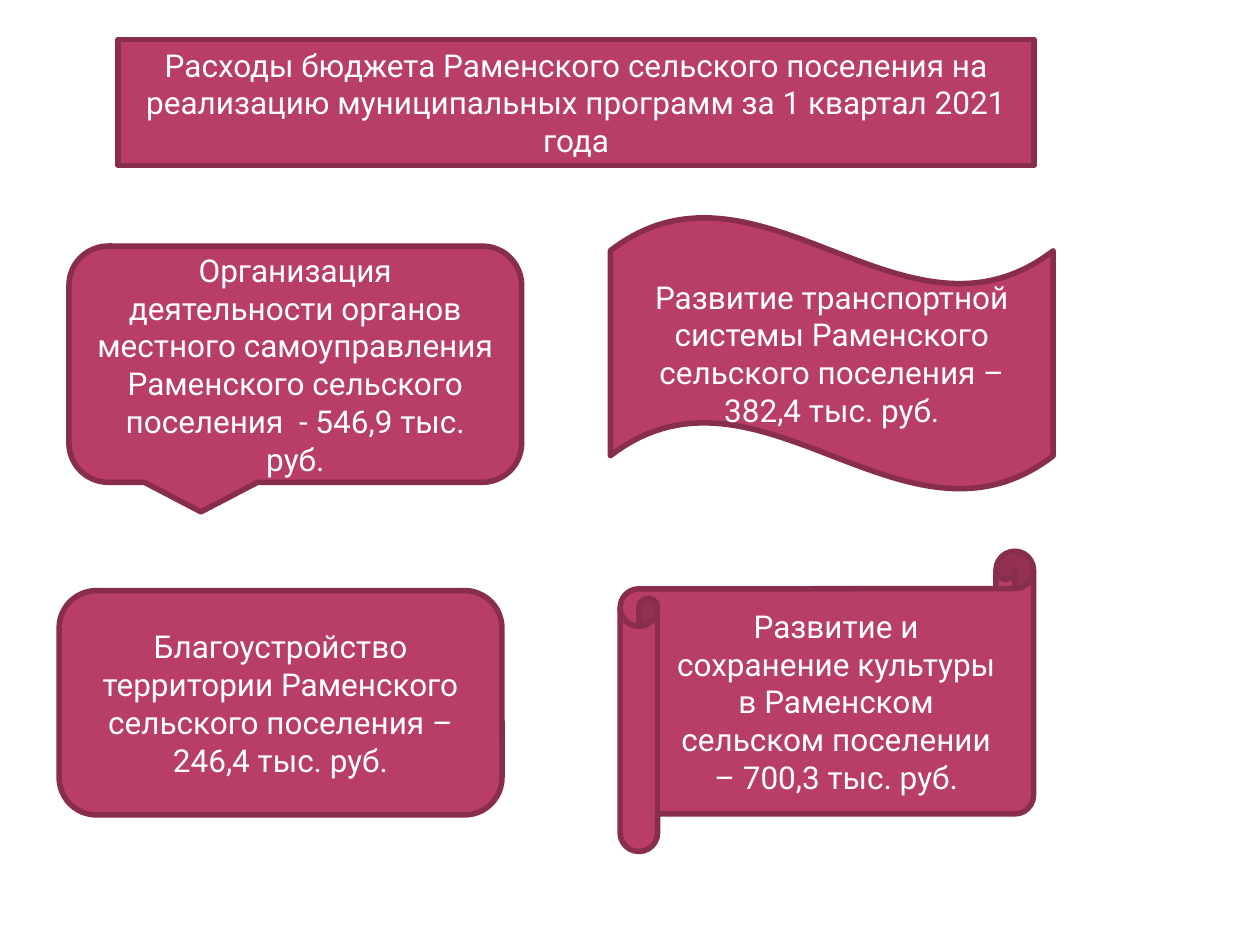
from pptx import Presentation
from pptx.dml.color import RGBColor
from pptx.enum import shapes, text
from pptx.util import Pt

COLORS = {"fill": "B83D68", "line": "882D4D", "text": "FFFFFF"}
SHAPE = shapes.MSO_SHAPE


def style(sp, wording):
    """Fill and outline a shape and centre its wording."""
    sp.fill.solid()
    sp.fill.fore_color.rgb = RGBColor.from_string(COLORS["fill"])
    sp.line.color.rgb = RGBColor.from_string(COLORS["line"])
    sp.line.width = Pt(3.15)
    tf = sp.text_frame
    tf.text = wording
    tf.word_wrap = True
    tf.auto_size = text.MSO_AUTO_SIZE.NONE
    tf.vertical_anchor = text.MSO_ANCHOR.MIDDLE
    p = tf.paragraphs[0]
    p.alignment = text.PP_ALIGN.CENTER
    p.font.name = "Roboto"
    p.font.size = Pt(18)
    p.font.color.rgb = RGBColor.from_string(COLORS["text"])


prs = Presentation()
prs.slide_width, prs.slide_height = Pt(720), Pt(540)
s = prs.slides.add_slide(prs.slide_layouts[5])

# Title
title = s.shapes.title
title.left, title.top, title.width, title.height = Pt(67.5), Pt(22.5), Pt(523.5), Pt(72)
style(title, "Расходы бюджета Раменского сельского поселения на реализацию "
             "муниципальных программ за 1 квартал 2021 года")

# Programmes: shape, left, top, width, height, wording
programmes = [
    (SHAPE.ROUNDED_RECTANGULAR_CALLOUT, 39.4, 140.6, 258.75, 135,
     "Организация деятельности органов местного самоуправления "
     "Раменского сельского поселения  - 546,9 тыс. руб."),
    (SHAPE.WAVE, 348.75, 123.75, 253.1, 156.25,
     "Развитие транспортной системы Раменского сельского поселения – "
     "382,4 тыс. руб."),
    (SHAPE.HORIZONTAL_SCROLL, 354.4, 315, 236.25, 171.6,
     "Развитие и сохранение культуры в Раменском сельском поселении – "
     "700,3 тыс. руб."),
    (SHAPE.ROUNDED_RECTANGLE, 33.75, 337.5, 253.1, 128.25,
     "Благоустройство территории Раменского сельского поселения – "
     "246,4 тыс. руб."),
]
for kind, left, top, width, height, wording in programmes:
    sp = s.shapes.add_shape(kind, Pt(left), Pt(top), Pt(width), Pt(height))
    sp.shadow.inherit = False
    style(sp, wording)

prs.save("out.pptx")
